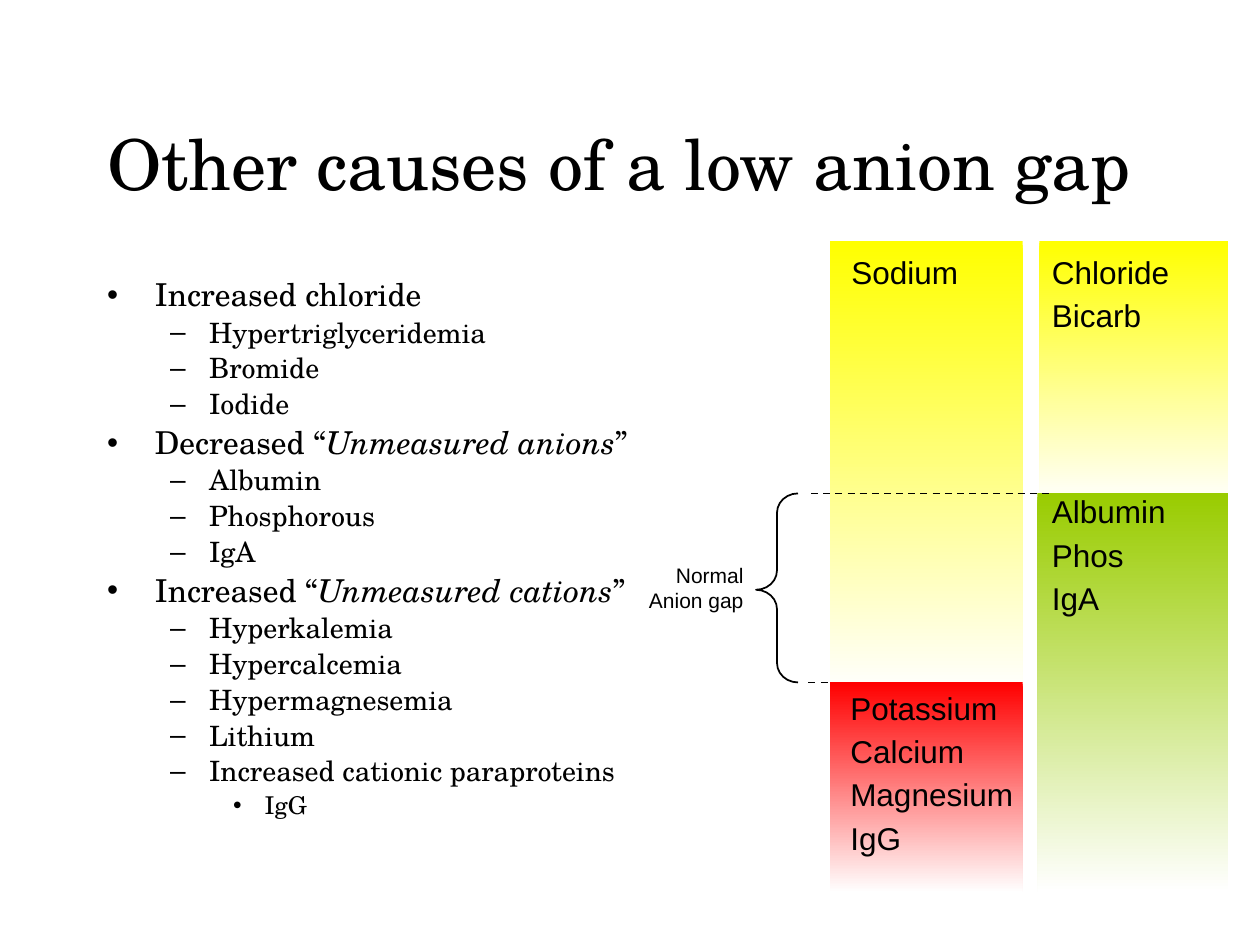
"""Build the slide on other causes of a low anion gap."""
from typing import NamedTuple

from lxml.etree import SubElement
from pptx import Presentation
from pptx.dml.color import RGBColor
from pptx.enum.dml import MSO_LINE
from pptx.enum.shapes import MSO_CONNECTOR, MSO_SHAPE
from pptx.enum.text import MSO_ANCHOR, MSO_AUTO_SIZE, PP_ALIGN
from pptx.oxml.ns import qn
from pptx.util import Inches, Pt

COLUMNS, ROWS = 120, 90
WIDTH, HEIGHT = Inches(10), Inches(7.5)


class Theme:
    serif, sans = "TeX Gyre Schola", "Arial"
    title_size, column_size, caption_size = 40, 18, 12
    black, white = "000000", "FFFFFF"
    yellow, red, green = "FFFF00", "FF0000", "99CC00"


class Area(NamedTuple):
    left: float
    top: float
    width: float
    height: float


class Level(NamedTuple):
    size: int
    bullet: str
    margin: float
    hanging: float


class Block(NamedTuple):
    area: Area
    color: str
    text_area: Area
    ions: list[str]


LEVELS = [Level(18, "•", 0.38, 0.38), Level(16, "–", 0.81, 0.31), Level(14, "•", 1.25, 0.25)]

CAUSES = [
    (0, "Increased chloride"),
    (1, "Hypertriglyceridemia"),
    (1, "Bromide"),
    (1, "Iodide"),
    (0, "Decreased “|Unmeasured anions|”"),
    (1, "Albumin"),
    (1, "Phosphorous"),
    (1, "IgA"),
    (0, "Increased “|Unmeasured cations|”"),
    (1, "Hyperkalemia"),
    (1, "Hypercalcemia"),
    (1, "Hypermagnesemia"),
    (1, "Lithium"),
    (1, "Increased cationic paraproteins"),
    (2, "IgG"),
]

BLOCKS = [
    Block(Area(79, 23, 18.4, 43), Theme.yellow, Area(79.9, 24.5, 17, 4), ["Sodium"]),
    Block(Area(99, 23, 18, 25), Theme.yellow, Area(99, 24.5, 16, 8.3), ["Chloride", "Bicarb"]),
    Block(Area(79, 65, 18.4, 20), Theme.red, Area(79.8, 66, 21, 17),
          ["Potassium", "Calcium", "Magnesium", "IgG"]),
    Block(Area(98.8, 47, 18.2, 38), Theme.green, Area(99, 47.3, 17, 12.7),
          ["Albumin", "Phos", "IgA"]),
]


def across(columns: float) -> int:
    """Turn grid columns into a length."""
    return round(columns * WIDTH / COLUMNS)


def down(rows: float) -> int:
    """Turn grid rows into a length."""
    return round(rows * HEIGHT / ROWS)


def lengths(area: Area) -> tuple[int, int, int, int]:
    """Return the left, top, width and height of an area."""
    return across(area.left), down(area.top), across(area.width), down(area.height)


def apply(target, values: dict) -> None:
    """Set each named attribute on the target."""
    for name, value in values.items():
        setattr(target, name, value)


def place(shape, area: Area) -> None:
    """Move a placeholder to an area."""
    apply(shape, dict(zip(("left", "top", "width", "height"), lengths(area))))


def write(para, text: str, size: int, face: str) -> None:
    """Add text to a paragraph, with parts between bars in italics."""
    for index, part in enumerate(text.split("|")):
        span = para.add_run()
        span.text = part
        apply(span.font, {"size": Pt(size), "name": face, "italic": index % 2 == 1})
        span.font.color.rgb = RGBColor.from_string(Theme.black)


def paragraphs(frame, count: int) -> list:
    """Return the given number of paragraphs of an empty frame."""
    return [frame.paragraphs[0]] + [frame.add_paragraph() for _ in range(count - 1)]


def fill_title(title) -> None:
    """Place and write the slide title."""
    place(title, Area(9, 8, 102, 15))
    apply(title.text_frame, {"vertical_anchor": MSO_ANCHOR.MIDDLE,
                             "auto_size": MSO_AUTO_SIZE.NONE})
    para = title.text_frame.paragraphs[0]
    para.alignment = PP_ALIGN.LEFT
    write(para, "Other causes of a low anion gap", Theme.title_size, Theme.serif)


def fill_causes(body) -> None:
    """Place and write the bulleted list of causes."""
    place(body, Area(9, 26, 56, 54))
    body.text_frame.auto_size = MSO_AUTO_SIZE.NONE
    paras = paragraphs(body.text_frame, len(CAUSES))
    for index, (para, (depth, text)) in enumerate(zip(paras, CAUSES)):
        level = LEVELS[depth]
        properties = para._p.get_or_add_pPr()
        properties.set("marL", str(Inches(level.margin)))
        properties.set("indent", str(-Inches(level.hanging)))
        SubElement(properties, qn("a:buChar")).set("char", level.bullet)
        apply(para, {"level": depth, "line_spacing": 0.9,
                     "space_before": Pt(0.2 * level.size if index else 0)})
        write(para, text, level.size, Theme.serif)


def add_text(slide, area: Area, lines: list[str], size: int, values: dict, gap: float = 0) -> None:
    """Add a text box with one paragraph per line."""
    box = slide.shapes.add_textbox(*lengths(area))
    apply(box.text_frame, {"word_wrap": True, "auto_size": MSO_AUTO_SIZE.SHAPE_TO_FIT_TEXT})
    for index, (para, line) in enumerate(zip(paragraphs(box.text_frame, len(lines)), lines)):
        apply(para, {**values, "space_before": Pt(gap if index else 0)})
        write(para, line, size, Theme.sans)


def add_block(slide, block: Block) -> None:
    """Add a rectangle that fades downward to white."""
    shape = slide.shapes.add_shape(MSO_SHAPE.RECTANGLE, *lengths(block.area))
    shape.shadow.inherit = False
    shape.line.fill.background()
    shape.fill.gradient()
    shape.fill.gradient_angle = 270
    for position, (stop, color) in enumerate(zip(shape.fill.gradient_stops,
                                                 (block.color, Theme.white))):
        stop.position = position
        stop.color.rgb = RGBColor.from_string(color)


def style_line(line) -> None:
    """Make a line thin and black."""
    line.width = Pt(1)
    line.color.rgb = RGBColor.from_string(Theme.black)


def add_dashes(slide, start: float, end: float, row: float) -> None:
    """Add a level dashed line along a grid row."""
    connector = slide.shapes.add_connector(MSO_CONNECTOR.STRAIGHT, across(start), down(row),
                                           across(end), down(row))
    style_line(connector.line)
    connector.line.dash_style = MSO_LINE.DASH
    SubElement(connector._element.spPr, qn("a:effectLst"))


def add_brace(slide, area: Area) -> None:
    """Add the brace that spans the normal anion gap."""
    brace = slide.shapes.add_shape(MSO_SHAPE.LEFT_BRACE, *lengths(area))
    brace.shadow.inherit = False
    brace.fill.background()
    style_line(brace.line)
    brace.adjustments[0], brace.adjustments[1] = 0.46, 0.51


def main() -> None:
    """Build and save the deck."""
    deck = Presentation()
    apply(deck, {"slide_width": WIDTH, "slide_height": HEIGHT})
    slide = deck.slides.add_slide(deck.slide_layouts[1])
    fill_title(slide.shapes.title)
    fill_causes(slide.placeholders[1])
    for block in BLOCKS:
        add_block(slide, block)
    for block in BLOCKS:
        add_text(slide, block.text_area, block.ions, Theme.column_size,
                 {"line_spacing": 0.7}, gap=9.6)
    add_brace(slide, Area(72, 47, 4, 18))
    add_dashes(slide, 77.25, 100.25, 47)
    add_dashes(slide, 77, 79, 65)
    add_text(slide, Area(59, 53, 13, 6), ["Normal Anion gap"], Theme.caption_size,
             {"alignment": PP_ALIGN.RIGHT})
    deck.save("out.pptx")


if __name__ == "__main__":
    main()
